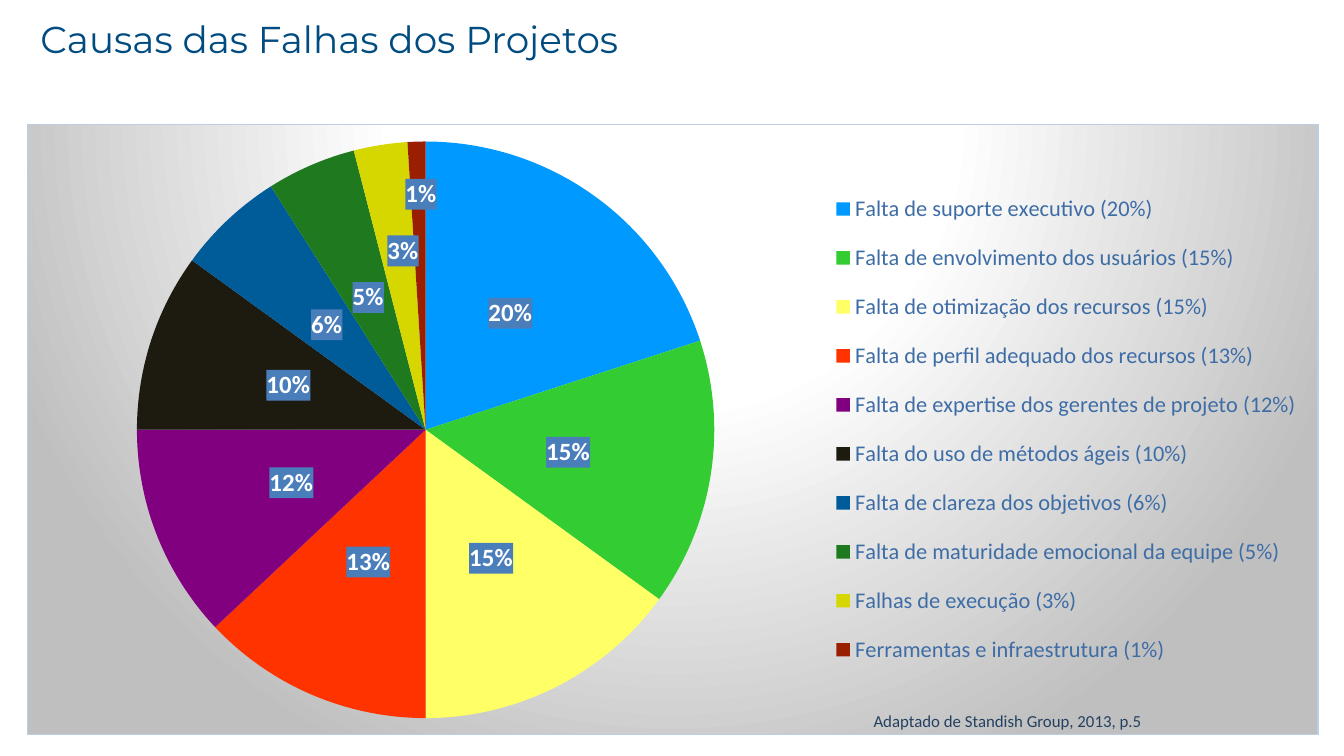
from copy import deepcopy

from pptx import Presentation
from pptx.chart.data import CategoryChartData
from pptx.dml.color import RGBColor
from pptx.enum.chart import XL_CHART_TYPE, XL_LABEL_POSITION, XL_LEGEND_POSITION
from pptx.enum.text import MSO_ANCHOR, MSO_AUTO_SIZE, PP_ALIGN
from pptx.oxml import parse_xml
from pptx.oxml.ns import nsdecls, qn
from pptx.util import Cm, Pt

TITLE = "Causas das Falhas dos Projetos"
SOURCE = "Adaptado de Standish Group, 2013, p.5"
CAUSES = [
    ("Falta de suporte executivo", 20, RGBColor(0x00, 0x99, 0xFF)),
    ("Falta de envolvimento dos usuários", 15, RGBColor(0x33, 0xCC, 0x33)),
    ("Falta de otimização dos recursos", 15, RGBColor(0xFF, 0xFF, 0x66)),
    ("Falta de perfil adequado dos recursos", 13, RGBColor(0xFF, 0x33, 0x00)),
    ("Falta de expertise dos gerentes de projeto", 12, RGBColor(0x80, 0x00, 0x80)),
    ("Falta do uso de métodos ágeis", 10, RGBColor(0x1D, 0x1B, 0x10)),
    ("Falta de clareza dos objetivos", 6, RGBColor(0x00, 0x5C, 0x99)),
    ("Falta de maturidade emocional da equipe", 5, RGBColor(0x1F, 0x7A, 0x1F)),
    ("Falhas de execução", 3, RGBColor(0xD6, 0xD6, 0x00)),
    ("Ferramentas e infraestrutura", 1, RGBColor(0x99, 0x1F, 0x00)),
]
LABEL_SHIFTS = {8: -0.06, 9: -0.15}

TITLE_BLUE = RGBColor(0x00, 0x4C, 0x80)
NAVY = RGBColor(0x24, 0x40, 0x61)
LEGEND_BLUE = RGBColor(0x3E, 0x6D, 0xA6)
LABEL_BLUE = RGBColor(0x4A, 0x7E, 0xBB)
BORDER_BLUE = RGBColor(0xBA, 0xCE, 0xE5)
WHITE = RGBColor(0xFF, 0xFF, 0xFF)
GRAY = RGBColor(0xBF, 0xBF, 0xBF)


def style_font(font, name, size, color, bold=False):
    font.name = name
    font.size = Pt(size)
    font.bold = bold
    font.color.rgb = color


def chart_xml(tag, content):
    return parse_xml(f'<c:{tag} {nsdecls("c", "a")}>{content}</c:{tag}>')


def make_layout(**settings):
    content = "".join(f'<c:{tag} val="{value}"/>' for tag, value in settings.items())
    return chart_xml("layout", f"<c:manualLayout>{content}</c:manualLayout>")


def remove_layout(parent):
    for layout in parent.findall(qn("c:layout")):
        parent.remove(layout)


def fill_chart_area(chart):
    stops = "".join(
        f'<a:gs pos="{position * 1000}"><a:srgbClr val="{color}"/></a:gs>'
        for position, color in [(0, WHITE), (39, WHITE), (100, GRAY)]
    )
    area = chart_xml(
        "spPr",
        f'<a:gradFill><a:gsLst>{stops}</a:gsLst><a:path path="circle">'
        '<a:fillToRect l="50000" t="-80000" r="50000" b="180000"/></a:path></a:gradFill>'
        f'<a:ln w="{Pt(0.75)}"><a:solidFill><a:srgbClr val="{BORDER_BLUE}"/></a:solidFill></a:ln>',
    )
    chart.element.find(qn("c:chart")).addnext(area)


def place_chart_parts(chart):
    plot_area = next(chart.element.iter(qn("c:plotArea")))
    remove_layout(plot_area)
    plot_area.insert(0, make_layout(layoutTarget="inner", xMode="edge", yMode="edge",
                                    x=0.033, y=0.028, w=0.551, h=0.945))
    legend = next(chart.element.iter(qn("c:legend")))
    remove_layout(legend)
    legend.find(qn("c:legendPos")).addnext(
        make_layout(xMode="edge", yMode="edge", x=0.62, y=0.08, w=0.37, h=0.84))


def format_labels(chart, series):
    labels = series.data_labels
    labels.show_value = False
    labels.show_percentage = True
    labels.number_format = "0%"
    labels.number_format_is_linked = False
    labels.position = XL_LABEL_POSITION.CENTER
    style_font(labels.font, "Calibri", 13.3, WHITE, bold=True)

    group = next(chart.element.iter(qn("c:dLbls")))
    group.find(qn("c:numFmt")).addnext(chart_xml(
        "spPr", f'<a:solidFill><a:srgbClr val="{LABEL_BLUE}"/></a:solidFill>'))
    shared = [child for child in group if child.tag != qn("c:showLeaderLines")]
    for position, (index, shift) in enumerate(LABEL_SHIFTS.items()):
        label = chart_xml("dLbl", f'<c:idx val="{index}"/>')
        label.append(make_layout(x=0, y=shift))
        label.extend(deepcopy(child) for child in shared)
        group.insert(position, label)


def add_causes_chart(slide):
    data = CategoryChartData()
    data.categories = [f"{cause} ({percent}%)" for cause, percent, color in CAUSES]
    data.add_series("Series 1", [percent for cause, percent, color in CAUSES])
    chart = slide.shapes.add_chart(
        XL_CHART_TYPE.PIE, Cm(0.51), Cm(2.34), Cm(24.41), Cm(11.56), data).chart
    chart.has_title = False
    style_font(chart.font, "Calibri", 10, NAVY)
    chart.has_legend = True
    chart.legend.position = XL_LEGEND_POSITION.RIGHT
    chart.legend.include_in_layout = False
    style_font(chart.legend.font, "Calibri", 12, LEGEND_BLUE)

    plot = chart.plots[0]
    plot.vary_by_categories = True
    series = plot.series[0]
    for index, (cause, percent, color) in enumerate(CAUSES):
        slice_format = series.points[index].format
        slice_format.fill.solid()
        slice_format.fill.fore_color.rgb = color
        slice_format.line.fill.background()
    format_labels(chart, series)
    place_chart_parts(chart)
    fill_chart_area(chart)


def add_title(slide):
    title = slide.shapes.title
    title.left, title.top, title.width, title.height = Cm(0.51), Cm(0.28), Cm(21.01), Cm(0.89)
    text_frame = title.text_frame
    text_frame.text = TITLE
    text_frame.auto_size = MSO_AUTO_SIZE.NONE
    text_frame.vertical_anchor = MSO_ANCHOR.MIDDLE
    paragraph = text_frame.paragraphs[0]
    paragraph.alignment = PP_ALIGN.LEFT
    style_font(paragraph.runs[0].font, "Montserrat", 20, TITLE_BLUE)


def add_source(slide):
    text_frame = slide.shapes.add_textbox(Cm(16.26), Cm(13.31), Cm(5.61), Cm(0.64)).text_frame
    text_frame.text = SOURCE
    text_frame.word_wrap = False
    text_frame.auto_size = MSO_AUTO_SIZE.SHAPE_TO_FIT_TEXT
    style_font(text_frame.paragraphs[0].runs[0].font, "Calibri", 9, NAVY)


def main():
    presentation = Presentation()
    presentation.slide_width, presentation.slide_height = Cm(25.4), Cm(14.29)
    slide = presentation.slides.add_slide(presentation.slide_layouts[5])
    add_title(slide)
    add_causes_chart(slide)
    add_source(slide)
    presentation.save("out.pptx")


if __name__ == "__main__":
    main()
